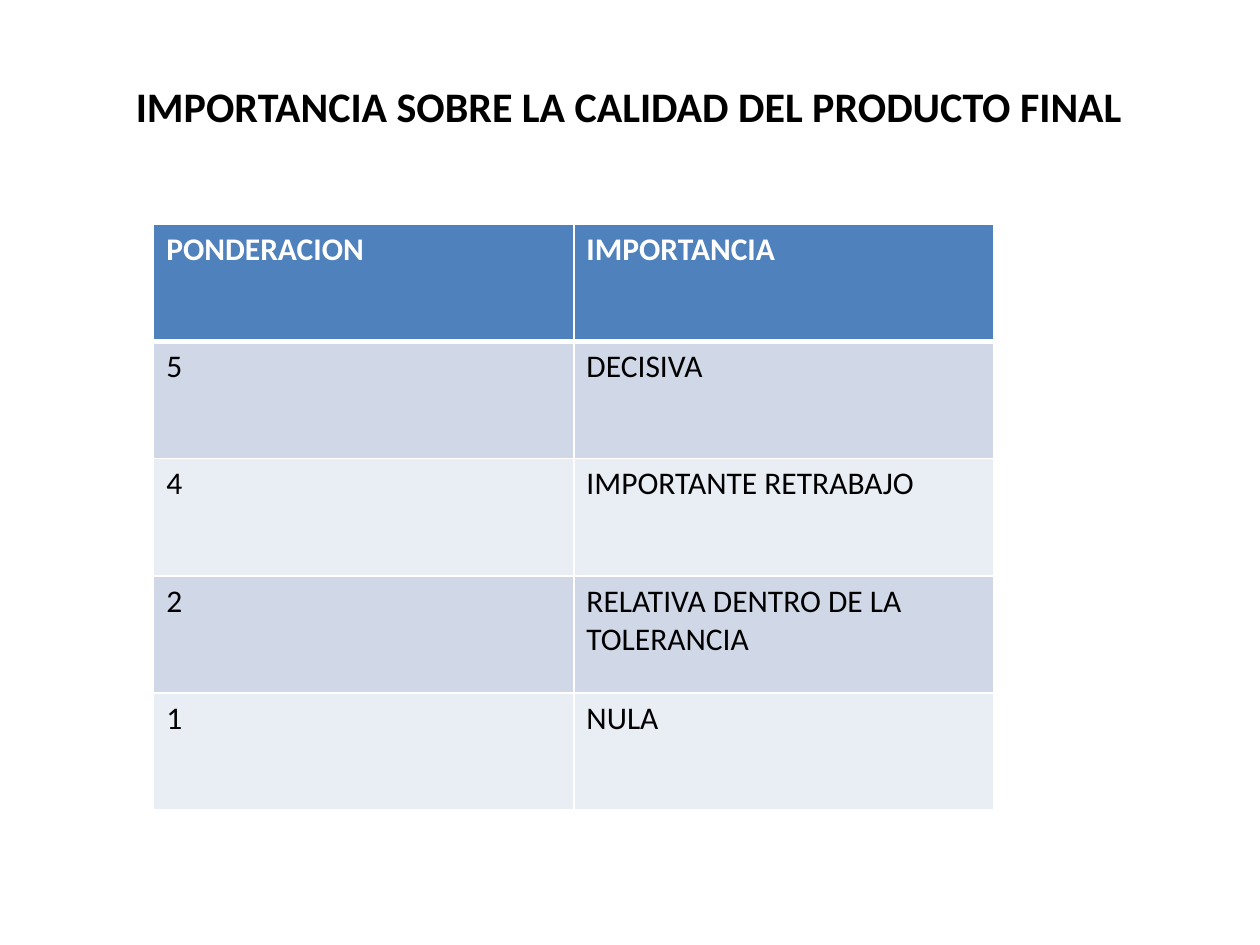
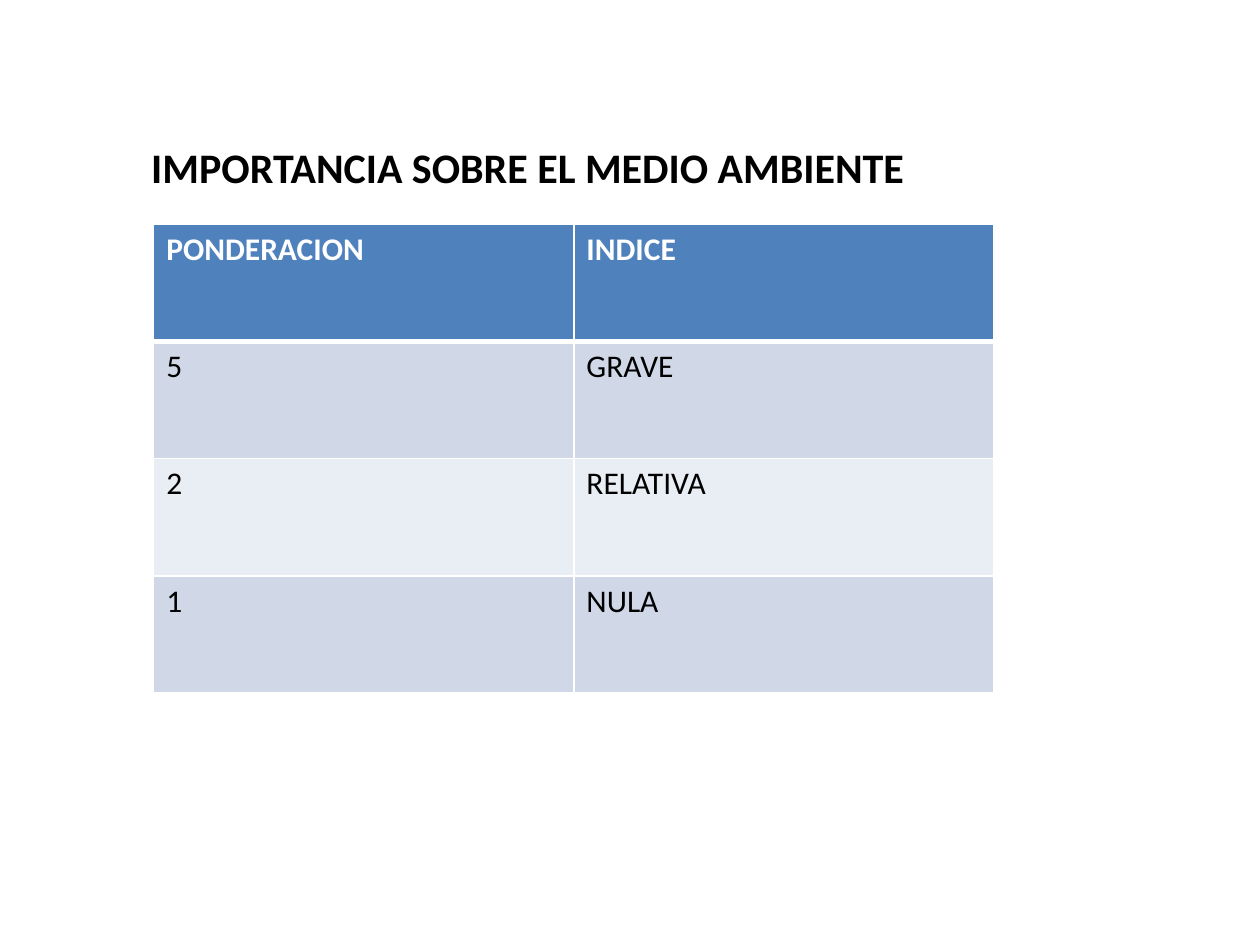
from dataclasses import dataclass

from lxml.etree import SubElement
from pptx import Presentation
from pptx.dml.color import RGBColor
from pptx.oxml.ns import qn
from pptx.util import Pt

PX = 9144  # 100 px to the inch


@dataclass(frozen=True)
class Theme:
    font: str = "Calibri"
    ink: str = "000000"
    paper: str = "FFFFFF"
    head: str = "4F81BD"
    bands: tuple = ("D0D8E8", "E9EDF4")
    title: int = 24
    body: int = 18
    thin: int = 1
    thick: int = 3


class Deck:
    def __init__(self, theme):
        self.theme = theme
        self.prs = Presentation()
        self.prs.slide_width, self.prs.slide_height = 1000 * PX, 750 * PX

    def page(self):
        self.slide = self.prs.slides.add_slide(self.prs.slide_layouts[6])

    def style(self, frame, size, color, bold):
        for para in frame.paragraphs:
            for run in para.runs:
                font = run.font
                font.name, font.size, font.bold = self.theme.font, Pt(size), bold
                font.color.rgb = RGBColor.from_string(color)

    def title(self, text, box, left=10, top=5):
        """Add a bold heading; left and top are its inner margins."""
        frame = self.slide.shapes.add_textbox(*(n * PX for n in box)).text_frame
        frame.word_wrap = True
        frame.margin_left, frame.margin_top = left * PX, top * PX
        frame.text = text
        self.style(frame, self.theme.title, self.theme.ink, True)

    def border(self, cell, **sides):
        """Draw cell sides in the order L, R, T, B, with widths in points."""
        props = cell._tc.get_or_add_tcPr()
        for spot, (side, width) in enumerate(sides.items()):
            line = SubElement(props, qn(f"a:ln{side}"), w=str(Pt(width)))
            fill = SubElement(line, qn("a:solidFill"))
            SubElement(fill, qn("a:srgbClr"), val=self.theme.paper)
            props.insert(spot, line)

    def table(self, rows, left=122, top=178, wide=667, high=93):
        look = self.theme
        count = len(rows)
        grid = self.slide.shapes.add_table(
            count, len(rows[0]), left * PX, top * PX, wide * PX, count * high * PX
        ).table
        for r, row in enumerate(rows):
            head = r == 0
            for c, text in enumerate(row):
                cell = grid.cell(r, c)
                cell.text_frame.text = text
                self.style(cell.text_frame, look.body,
                           look.paper if head else look.ink, head)
                cell.fill.solid()
                shade = look.head if head else look.bands[(r - 1) % 2]
                cell.fill.fore_color.rgb = RGBColor.from_string(shade)
                self.border(cell, L=look.thin, R=look.thin,
                            T=look.thick if r == 1 else look.thin,
                            B=look.thick if head else look.thin)


def main():
    deck = Deck(Theme())

    deck.page()
    deck.title("IMPORTANCIA SOBRE LA CALIDAD DEL PRODUCTO FINAL", (98, 59, 827, 50))
    deck.table([
        ("PONDERACION", "IMPORTANCIA"),
        ("5", "DECISIVA"),
        ("4", "IMPORTANTE RETRABAJO"),
        ("2", "RELATIVA DENTRO DE LA TOLERANCIA"),
        ("1", "NULA"),
    ])

    deck.page()
    deck.title("IMPORTANCIA SOBRE EL MEDIO AMBIENTE", (75, 102, 843, 57), left=45, top=10)
    deck.table([
        ("PONDERACION", "INDICE"),
        ("5", "GRAVE"),
        ("2", "RELATIVA"),
        ("1", "NULA"),
    ])

    deck.prs.save("out.pptx")


if __name__ == "__main__":
    main()
